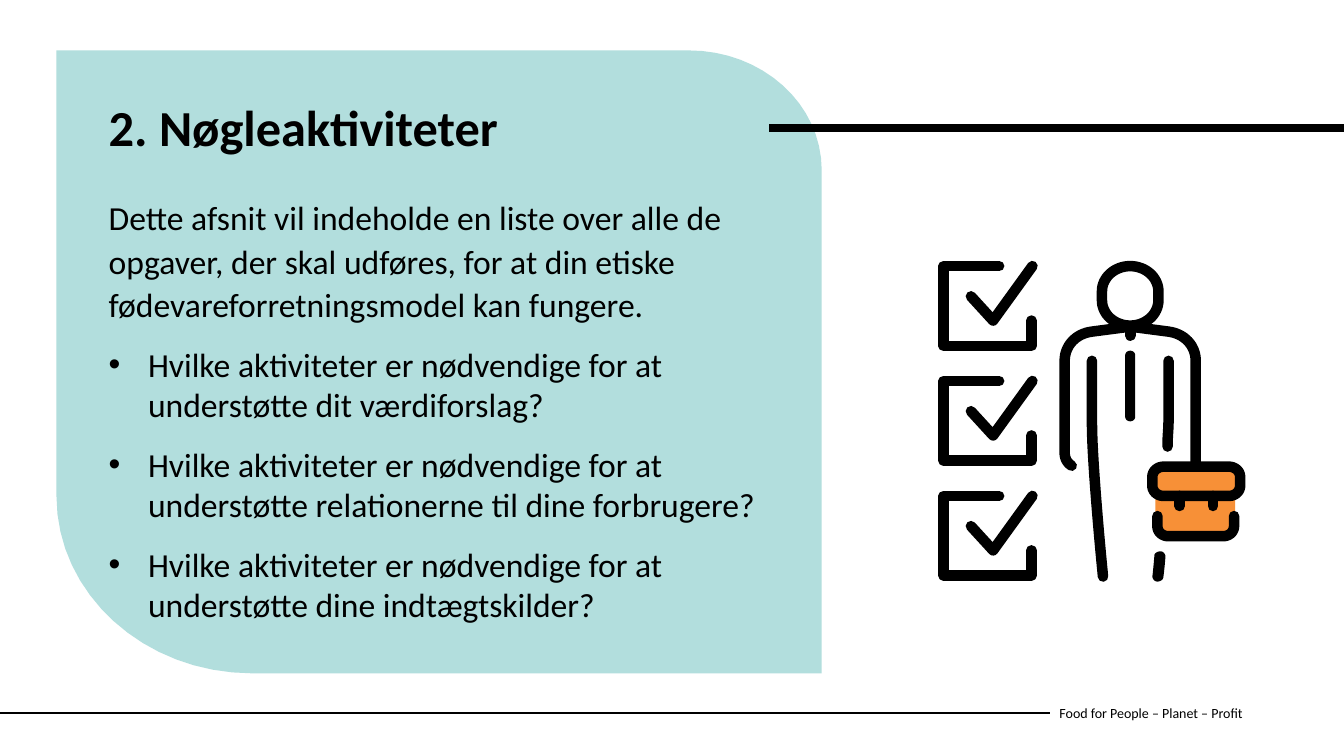
import pptx
import pptx.dml.color
import pptx.enum.shapes
import pptx.enum.text
import pptx.oxml
import pptx.util
from lxml import etree
from pptx.util import Inches

BLACK, TEAL, ORANGE = "000000", "B2DEDD", "F79037"
ICON_LINE = 7.5
QUESTIONS = [
    "understøtte dit værdiforslag?",
    "understøtte relationerne til dine forbrugere?",
    "understøtte dine indtægtskilder?",
]


def colour(value):
    """Turn a hex string into a colour."""
    return pptx.dml.color.RGBColor.from_string(value)


def add_child(parent, tag, **attributes):
    """Append a DrawingML element and return it."""
    child = etree.SubElement(parent, pptx.oxml.ns.qn(tag))
    for name, value in attributes.items():
        child.set(name, value)
    return child


def style_line(item, width, join, cap="flat"):
    """Give a black line with the named join and ends."""
    item.line.color.rgb = colour(BLACK)
    item.line.width = pptx.util.Pt(width)
    outline = item.line._get_or_add_ln()
    outline.set("cap", cap)
    add_child(outline, join)


def add_line(page, start, end, width, cap="flat"):
    """Draw a straight line between two points."""
    line = page.shapes.add_connector(
        pptx.enum.shapes.MSO_CONNECTOR.STRAIGHT,
        *(Inches(value) for value in start + end))
    style_line(line, width, "a:round", cap)
    add_child(line._element.spPr, "a:effectLst")


def trace(steps, samples=16):
    """Flatten points and cubic curves into a list of points."""
    points = [steps[0]]
    for step in steps[1:]:
        if len(step) == 2:
            points.append(step)
            continue
        corners = (points[-1], step[:2], step[2:4], step[4:])
        for index in range(1, samples + 1):
            t = index / samples
            weights = ((1 - t) ** 3, 3 * t * (1 - t) ** 2,
                       3 * t * t * (1 - t), t ** 3)
            points.append(tuple(
                sum(w * corner[axis] for w, corner in zip(weights, corners))
                for axis in (0, 1)))
    return points


def add_outline(page, steps, fill=None, closed=False):
    """Draw a filled outline, or a thick rounded stroke without a fill."""
    points = [(Inches(x), Inches(y)) for x, y in trace(steps)]
    builder = page.shapes.build_freeform(*points[0])
    builder.add_line_segments(points[1:], close=closed)
    outline = builder.convert_to_shape()
    outline.shadow.inherit = False
    if fill:
        outline.fill.solid()
        outline.fill.fore_color.rgb = colour(fill)
        outline.line.fill.background()
    else:
        outline.fill.background()
        style_line(outline, ICON_LINE, "a:round", "rnd")


def add_rounded(page, left, top, right, bottom, rx, ry):
    """Draw a stroked box with round corners."""
    kx, ky = rx * 0.45, ry * 0.45
    add_outline(page, [
        (left, top + ry), (left, top + ky, left + kx, top, left + rx, top),
        (right - rx, top),
        (right - kx, top, right, top + ky, right, top + ry),
        (right, bottom - ry),
        (right, bottom - ky, right - kx, bottom, right - rx, bottom),
        (left + rx, bottom),
        (left + kx, bottom, left, bottom - ky, left, bottom - ry),
    ], closed=True)


def add_box(page, fill, left, top, width, height):
    """Draw a plain filled rectangle."""
    box = page.shapes.add_shape(
        pptx.enum.shapes.MSO_SHAPE.RECTANGLE,
        Inches(left), Inches(top), Inches(width), Inches(height))
    box.shadow.inherit = False
    box.fill.solid()
    box.fill.fore_color.rgb = colour(fill)
    box.line.fill.background()
    return box


def add_text_box(page, left, top, width, height):
    """Add a wrapping text box and return its frame."""
    frame = page.shapes.add_textbox(
        Inches(left), Inches(top), Inches(width), Inches(height)).text_frame
    frame.word_wrap = True
    return frame


def add_span(para, text, size, bold=False):
    """Add one run of black text."""
    span = para.add_run()
    span.text = text
    span.font.name = "Calibri"
    span.font.size = pptx.util.Pt(size)
    span.font.bold = bold
    span.font.color.rgb = colour(BLACK)


def set_spacing(para, before, after=0, lines=1.0):
    """Set the spacing of a paragraph."""
    para.space_before = pptx.util.Pt(before)
    para.space_after = pptx.util.Pt(after)
    para.line_spacing = lines


def add_bullet(para):
    """Give a paragraph a hanging bullet."""
    properties = para._p.get_or_add_pPr()
    properties.set("marL", str(Inches(0.39)))
    properties.set("indent", str(-Inches(0.39)))
    add_child(properties, "a:buFont", typeface="Arial")
    add_child(properties, "a:buChar", char="•")


def add_texts(page):
    """Write the heading, the introduction and the questions."""
    body = add_text_box(page, 0.98, 1.88, 6.96, 4.25)
    intro = body.paragraphs[0]
    set_spacing(intro, 10, 8, 1.07)
    add_span(intro, "Dette afsnit vil indeholde en liste over alle de opgaver, "
             "der skal udføres, for at din etiske fødevareforretningsmodel "
             "kan fungere.", 24)
    for question in QUESTIONS:
        para = body.add_paragraph()
        set_spacing(para, 6, 8)
        add_bullet(para)
        add_span(para, "Hvilke aktiviteter er nødvendige for at " + question, 24)
    heading = add_text_box(page, 0.98, 0.97, 5.46, 1.09).paragraphs[0]
    set_spacing(heading, 10, lines=0.9)
    add_span(heading, "2. Nøgleaktiviteter", 36, True)


def add_checkbox(page, top):
    """Draw one open box with a tick."""
    add_outline(page, [(9.91, top), (9.36, top), (9.36, top + 0.79),
                       (10.23, top + 0.79), (10.23, top + 0.54)])
    add_outline(page, [(9.63, top + 0.3), (9.85, top + 0.54), (10.24, top)])


def add_worker(page):
    """Draw the person with the briefcase."""
    add_box(page, ORANGE, 11.46, 4.65, 0.79, 0.63)
    add_rounded(page, 10.93, 2.64, 11.49, 3.23, 0.28, 0.25)
    add_outline(page, [
        (10.63, 4.62), (10.58, 4.59, 10.56, 4.54, 10.56, 4.49), (10.56, 3.58),
        (10.56, 3.43, 10.67, 3.31, 10.83, 3.29), (11.21, 3.24), (11.59, 3.29),
        (11.75, 3.31, 11.86, 3.43, 11.86, 3.58), (11.86, 4.6)])
    add_outline(page, [(10.83, 3.58), (10.83, 4.18),
                       (10.83, 4.62, 10.94, 5.72, 10.94, 5.72)])
    add_outline(page, [(11.59, 3.58), (11.59, 4.18),
                       (11.59, 4.25, 11.58, 4.33, 11.58, 4.43)])
    add_outline(page, [
        (11.21, 3.48), (11.18, 3.48, 11.16, 3.5, 11.16, 3.53), (11.16, 4.13),
        (11.16, 4.16, 11.18, 4.18, 11.21, 4.18),
        (11.24, 4.18, 11.26, 4.16, 11.26, 4.13), (11.26, 3.53),
        (11.26, 3.5, 11.24, 3.48, 11.21, 3.48)], BLACK, True)
    add_outline(page, [
        (11.51, 5.47), (11.48, 5.47, 11.45, 5.49, 11.45, 5.51),
        (11.44, 5.64, 11.43, 5.72, 11.43, 5.72),
        (11.43, 5.74, 11.45, 5.77, 11.48, 5.77),
        (11.51, 5.77, 11.54, 5.75, 11.54, 5.72),
        (11.54, 5.72, 11.55, 5.65, 11.56, 5.52),
        (11.56, 5.5, 11.54, 5.47, 11.51, 5.47)], BLACK, True)
    add_rounded(page, 11.43, 4.63, 12.3, 4.92, 0.11, 0.1)
    add_outline(page, [
        (11.48, 5.12), (11.48, 5.22), (11.48, 5.28, 11.53, 5.32, 11.59, 5.32),
        (12.13, 5.32), (12.19, 5.32, 12.24, 5.28, 12.24, 5.22), (12.24, 5.12)])
    for x, top, bottom in [(11.21, 3.24, 3.33), (11.7, 4.92, 5.02),
                           (12.03, 4.92, 5.02)]:
        add_line(page, (x, top), (x, bottom), ICON_LINE, "rnd")


def main():
    """Build and save the slide."""
    deck = pptx.Presentation()
    deck.slide_width, deck.slide_height = Inches(13.33), Inches(7.5)
    page = deck.slides.add_slide(deck.slide_layouts[6])
    footer = add_text_box(page, 10.41, 6.87, 2.73, 0.4)
    footer.vertical_anchor = pptx.enum.text.MSO_ANCHOR.MIDDLE
    add_span(footer.paragraphs[0], "Food for People – Planet – Profit", 10)
    add_line(page, (0, 7.07), (10.41, 7.07), 1.5)
    add_outline(page, [
        (8.15, 6.68), (2.5, 6.68), (1.43, 6.68, 0.56, 5.89, 0.56, 4.92),
        (0.56, 0.5), (6.83, 0.5), (7.56, 0.5, 8.15, 1.03, 8.15, 1.69),
    ], TEAL, True)
    style_line(add_box(page, BLACK, 7.64, 1.24, 5.69, 0.06), 1.93, "a:miter")
    add_texts(page)
    for row in range(3):
        add_checkbox(page, 2.64 + 1.14 * row)
    add_worker(page)
    deck.save("out.pptx")


if __name__ == "__main__":
    main()
